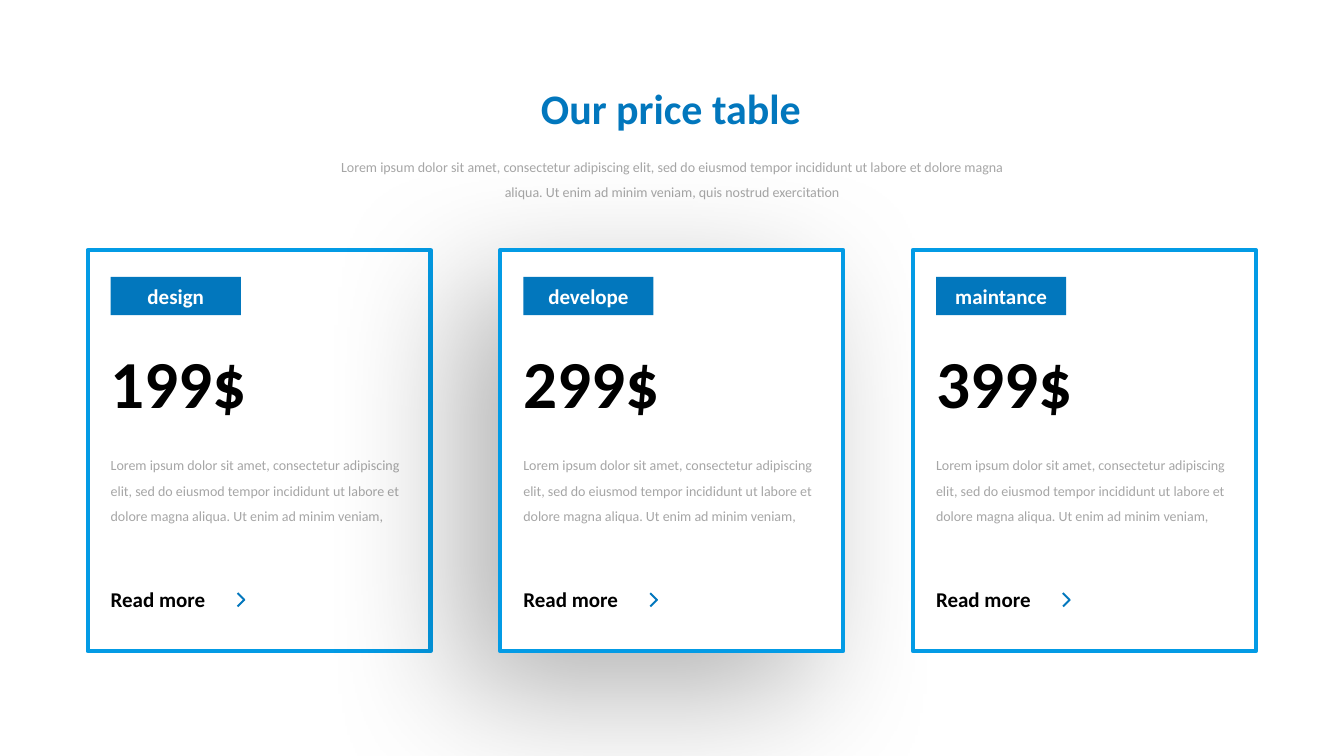
from dataclasses import dataclass

from lxml import etree
from pptx import Presentation
from pptx.dml.color import RGBColor
from pptx.enum.shapes import MSO_SHAPE
from pptx.enum.text import MSO_ANCHOR, MSO_AUTO_SIZE, PP_ALIGN
from pptx.oxml.ns import qn
from pptx.shapes.autoshape import Shape
from pptx.slide import Slide
from pptx.util import Cm, Pt

RECTANGLE = MSO_SHAPE.RECTANGLE
TOP = MSO_ANCHOR.TOP
GROW = MSO_AUTO_SIZE.SHAPE_TO_FIT_TEXT
LEFT, CENTER = PP_ALIGN.LEFT, PP_ALIGN.CENTER

WHITE = RGBColor(0xFF, 0xFF, 0xFF)
BLACK = RGBColor(0x00, 0x00, 0x00)
GRAY = RGBColor(0xA6, 0xA6, 0xA6)
DEEP_BLUE = RGBColor(0x02, 0x77, 0xBD)
BORDER_BLUE = RGBColor(0x03, 0x9B, 0xE5)
LIGHT_BLUE = RGBColor(0x03, 0xA9, 0xF4)

FONT = "Calibri"
CARD_LEFT, CARD_TOP, CARD_PITCH = 2.21, 6.3, 10.4
CARD_WIDTH, CARD_HEIGHT = 8.64, 10.11
PADDING = 0.58

INTRO = (
    "Lorem ipsum dolor sit amet, consectetur adipiscing elit, sed do eiusmod tempor "
    "incididunt ut labore et dolore magna aliqua. Ut enim ad minim veniam, "
    "quis nostrud exercitation"
)
DESCRIPTION = (
    "Lorem ipsum dolor sit amet, consectetur adipiscing elit, sed do eiusmod tempor "
    "incididunt ut labore et dolore magna aliqua. Ut enim ad minim veniam,"
)


@dataclass(frozen=True)
class Box:
    left: float
    top: float
    width: float
    height: float


@dataclass(frozen=True)
class TextStyle:
    size: int
    color: RGBColor
    bold: bool = True
    align: PP_ALIGN = LEFT
    wrap: bool = False
    spacing: float = 1.0


@dataclass(frozen=True)
class Plan:
    service: str
    price: str
    featured: bool = False


TITLE = TextStyle(30, DEEP_BLUE, align=CENTER)
INTRO_STYLE = TextStyle(10, GRAY, bold=False, align=CENTER, wrap=True, spacing=1.5)
DESCRIPTION_STYLE = TextStyle(10, GRAY, bold=False, wrap=True, spacing=1.5)
BADGE = TextStyle(15, WHITE, align=CENTER)
PRICE = TextStyle(48, BLACK)
READ_MORE = TextStyle(15, BLACK)

PLANS = [
    Plan("design", "199$"),
    Plan("develope", "299$", featured=True),
    Plan("maintance", "399$"),
]


def write(holder: Shape, words: str, style: TextStyle) -> None:
    frame = holder.text_frame
    frame.text = words
    frame.margin_left = frame.margin_right = frame.margin_top = frame.margin_bottom = 0
    frame.word_wrap = style.wrap
    frame.auto_size = GROW
    frame.vertical_anchor = TOP
    paragraph = frame.paragraphs[0]
    paragraph.alignment = style.align
    paragraph.line_spacing = style.spacing
    font = paragraph.runs[0].font
    font.name = FONT
    font.size = Pt(style.size)
    font.bold = style.bold
    font.color.rgb = style.color


def lengths(box: Box) -> tuple[Cm, Cm, Cm, Cm]:
    return Cm(box.left), Cm(box.top), Cm(box.width), Cm(box.height)


def add_text(slide: Slide, box: Box, words: str, style: TextStyle) -> None:
    write(slide.shapes.add_textbox(*lengths(box)), words, style)


def add_rectangle(shapes, box: Box, fill: RGBColor) -> Shape:
    rectangle = shapes.add_shape(RECTANGLE, *lengths(box))
    rectangle.shadow.inherit = False
    rectangle.fill.solid()
    rectangle.fill.fore_color.rgb = fill
    rectangle.line.fill.background()
    return rectangle


def cast_shadow(card: Shape) -> None:
    effects = card.element.spPr.find(qn("a:effectLst"))
    shadow = etree.SubElement(
        effects, qn("a:outerShdw"), blurRad=str(Pt(100)), dist=str(Pt(40)),
        dir=str(135 * 60000), algn="tr", rotWithShape="0",
    )
    color = etree.SubElement(shadow, qn("a:srgbClr"), val=str(BLACK))
    etree.SubElement(color, qn("a:alpha"), val="30000")


def add_title(slide: Slide) -> None:
    title = slide.shapes.title
    title.left, title.top, title.width, title.height = lengths(Box(13.61, 2.08, 6.6, 1.27))
    write(title, "Our price table", TITLE)
    fill = title.text_frame.paragraphs[0].runs[0].font.fill
    fill.gradient()
    fill.gradient_angle = 315
    for stop, color in zip(fill.gradient_stops, (DEEP_BLUE, LIGHT_BLUE)):
        stop.color.rgb = color


def add_chevron(slide: Slide, left: float) -> None:
    chevron = slide.shapes.add_group_shape()
    for top, angle in ((15.01, 45), (15.17, 135)):
        arm = add_rectangle(chevron.shapes, Box(left, top, 0.25, 0.05), DEEP_BLUE)
        arm.rotation = angle


def add_plan(slide: Slide, plan: Plan, left: float) -> None:
    card = add_rectangle(slide.shapes, Box(left, CARD_TOP, CARD_WIDTH, CARD_HEIGHT), WHITE)
    card.line.color.rgb = BORDER_BLUE
    card.line.width = Pt(3)
    if plan.featured:
        cast_shadow(card)
    inner = left + PADDING
    add_rectangle(slide.shapes, Box(inner, 6.98, 3.28, 0.96), DEEP_BLUE)
    add_text(slide, Box(inner, 7.14, 3.28, 0.64), plan.service, BADGE)
    add_text(slide, Box(inner, 8.59, 3.48, 2.06), plan.price, PRICE)
    add_text(slide, Box(inner, 11.3, 7.49, 1.85), DESCRIPTION, DESCRIPTION_STYLE)
    add_text(slide, Box(inner, 14.78, 2.41, 0.64), "Read more", READ_MORE)
    add_chevron(slide, inner + 3.16)


def main() -> None:
    presentation = Presentation()
    presentation.slide_width = Cm(33.87)
    presentation.slide_height = Cm(19.05)
    slide = presentation.slides.add_slide(presentation.slide_layouts[5])
    add_title(slide)
    add_text(slide, Box(8.31, 3.78, 17.25, 1.22), INTRO, INTRO_STYLE)
    for index, plan in enumerate(PLANS):
        add_plan(slide, plan, CARD_LEFT + index * CARD_PITCH)
    presentation.save("out.pptx")


if __name__ == "__main__":
    main()
